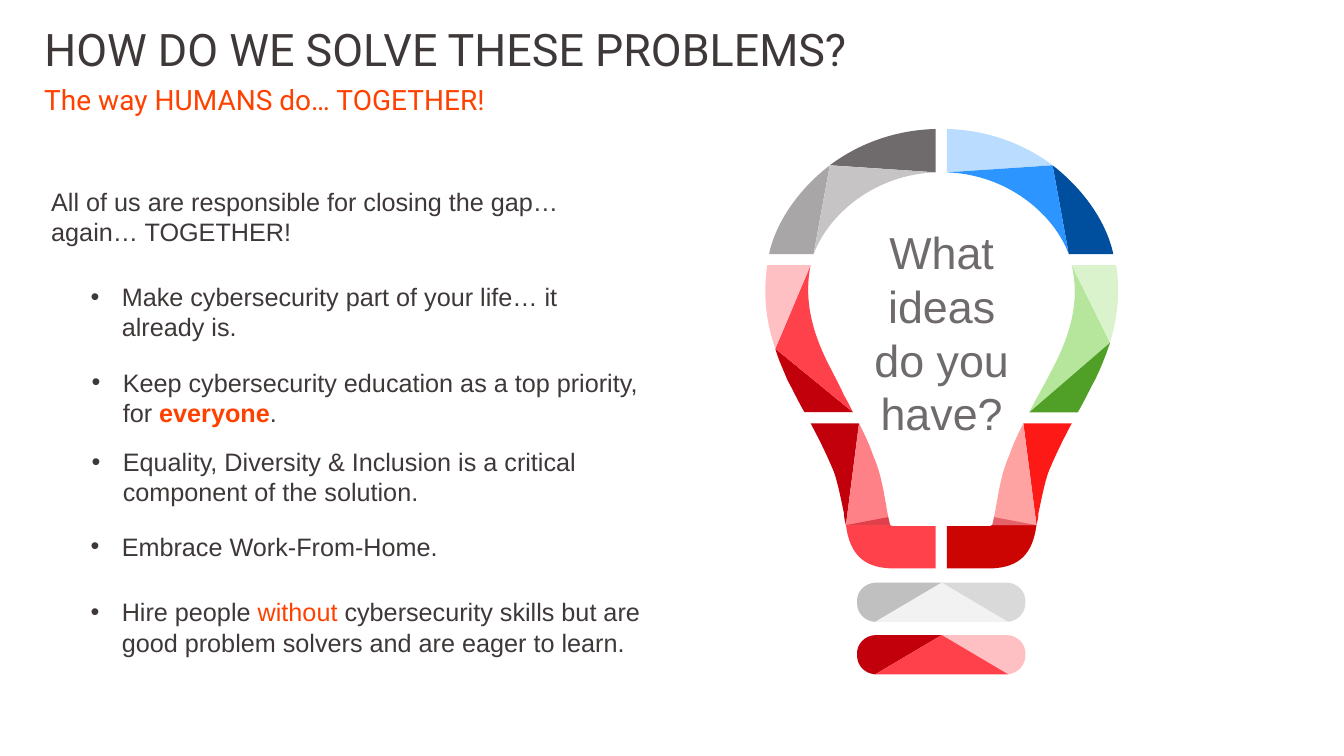
from lxml.etree import SubElement
from pptx import Presentation
from pptx.dml.color import RGBColor
from pptx.enum.text import MSO_ANCHOR as Anchor, MSO_AUTO_SIZE as AutoSize, PP_ALIGN as Align
from pptx.oxml.ns import qn
from pptx.util import Inches, Pt

INK = RGBColor(0x3E, 0x38, 0x38)
ORANGE = RGBColor(0xFF, 0x41, 0x00)
SLATE = RGBColor(0x6F, 0x6B, 0x6C)
GREY = RGBColor(0xA9, 0xA6, 0xA7)
SILVER = RGBColor(0xC6, 0xC4, 0xC4)
CAP_DARK = RGBColor(0xC0, 0xC0, 0xC0)
CAP_MID = RGBColor(0xD9, 0xD9, 0xD9)
CAP_LIGHT = RGBColor(0xF2, 0xF2, 0xF2)
NAVY = RGBColor(0x00, 0x4F, 0x9F)
BLUE = RGBColor(0x2C, 0x95, 0xFF)
SKY = RGBColor(0xB9, 0xDC, 0xFF)
GREEN = RGBColor(0x50, 0xA0, 0x28)
LIME = RGBColor(0xB5, 0xE6, 0x9C)
MINT = RGBColor(0xDA, 0xF3, 0xCD)
CRIMSON = RGBColor(0xC2, 0x00, 0x0B)
RED = RGBColor(0xFF, 0x41, 0x4C)
ROSE = RGBColor(0xFF, 0x81, 0x88)
PINK = RGBColor(0xFF, 0xC0, 0xC3)
SALMON = RGBColor(0xFE, 0xA3, 0xA2)
SCARLET = RGBColor(0xFD, 0x1A, 0x16)
BRICK = RGBColor(0xCC, 0x05, 0x02)
SHADE = RGBColor(0xCC, 0x23, 0x31)

HEADING = "HOW DO WE SOLVE THESE PROBLEMS?"
SUBHEADING = "The way HUMANS do… TOGETHER!"
INTRO = "All of us are responsible for closing the gap… again… TOGETHER!"
QUESTION = "What ideas do you have?"
HOT = {"color": ORANGE}
HOT_BOLD = {"color": ORANGE, "bold": True}
IDEAS = [
    ((0.8, 2.74, 5.52, 0.71), [("Make cybersecurity part of your life… it already is.", {})]),
    ((0.81, 3.59, 5.9, 0.71), [("Keep cybersecurity education as a top priority, for ", {}),
                               ("everyone", HOT_BOLD), (".", {})]),
    ((0.81, 4.38, 6.06, 0.71),
     [("Equality, Diversity & Inclusion is a critical component of the solution.", {})]),
    ((0.8, 5.22, 5.13, 0.4), [("Embrace Work-From-Home.", {})]),
    ((0.8, 5.87, 5.76, 0.71), [("Hire people ", {}), ("without", HOT),
                               (" cybersecurity skills but are good problem solvers"
                                " and are eager to learn.", {})]),
]

MIRRORED_FACETS = [
    (GREY, NAVY, [(8.23, 1.64), (7.92, 1.88, 7.7, 2.2, 7.63, 2.51), (7.63, 2.52),
                  (8.07, 2.52)]),
    (SLATE, SKY, [(9.28, 1.28), (8.9, 1.29, 8.54, 1.41, 8.23, 1.64), (9.28, 1.71)]),
    (SILVER, BLUE, [(9.28, 1.71), (8.23, 1.64), (8.07, 2.52),
                    (8.22, 2.12, 8.68, 1.73, 9.28, 1.71)]),
    (CRIMSON, SCARLET, [(8.52, 4.2), (8.04, 4.2), (8.12, 4.35, 8.2, 4.51, 8.27, 4.68),
                        (8.31, 4.79, 8.34, 4.95, 8.37, 5.09),
                        (8.37, 5.13, 8.38, 5.17, 8.39, 5.21)]),
    (RED, BRICK, [(8.4, 5.27), (8.45, 5.53, 8.6, 5.64, 8.87, 5.64),
                  (8.91, 5.64, 8.94, 5.64, 8.98, 5.64), (9.28, 5.64), (9.28, 5.22),
                  (8.98, 5.22), (8.94, 5.22, 8.91, 5.22, 8.87, 5.22),
                  (8.86, 5.22, 8.84, 5.22, 8.83, 5.21), (8.39, 5.21),
                  (8.39, 5.23, 8.4, 5.25, 8.4, 5.27)]),
    (ROSE, SALMON, [(8.39, 5.21), (8.83, 5.21), (8.83, 5.21, 8.82, 5.2, 8.82, 5.18),
                    (8.81, 5.13, 8.8, 5.08, 8.79, 5.02),
                    (8.76, 4.85, 8.73, 4.67, 8.66, 4.52),
                    (8.62, 4.4, 8.57, 4.3, 8.52, 4.2)]),
]
NECK_SHADE = [(8.39, 5.21), (8.83, 5.21), (8.81, 5.13)]
SIDE_FACETS = [
    (CRIMSON, [(7.69, 3.46), (7.72, 3.57, 7.77, 3.67, 7.81, 3.77),
               (7.87, 3.88, 7.92, 3.99, 7.98, 4.09), (8.46, 4.09)]),
    (RED, [(8.37, 3.92), (8.32, 3.81, 8.26, 3.7, 8.2, 3.58),
           (8.03, 3.23, 7.98, 2.93, 8.04, 2.63), (7.69, 3.46), (8.46, 4.09),
           (8.43, 4.03, 8.4, 3.97, 8.37, 3.92)]),
    (PINK, [(7.61, 2.63), (7.57, 2.9, 7.59, 3.17, 7.69, 3.46), (8.04, 2.63)]),
    (LIME, [(10.63, 2.63), (10.7, 2.93, 10.65, 3.23, 10.48, 3.58),
            (10.42, 3.7, 10.36, 3.81, 10.3, 3.92),
            (10.27, 3.97, 10.24, 4.03, 10.21, 4.09), (11.01, 3.4)]),
    (GREEN, [(10.69, 4.09), (10.75, 3.99, 10.8, 3.88, 10.86, 3.77),
             (10.92, 3.65, 10.97, 3.52, 11.01, 3.4), (10.21, 4.09)]),
    (MINT, [(11.07, 2.63), (10.63, 2.63), (11.01, 3.4),
            (11.09, 3.13, 11.11, 2.88, 11.07, 2.63)]),
]
CAP_END = [(8.69, 0), (8.58, 0, 8.49, 0.09, 8.5, 0.2),
           (8.5, 0.3, 8.57, 0.38, 8.68, 0.39), (9.34, 0)]
CAP_MIDDLE = [(8.68, 0.39), (10, 0.39), (9.34, 0)]
CAPS = [(5.78, CAP_DARK, CAP_MID, CAP_LIGHT), (6.3, CRIMSON, PINK, RED)]
MIRROR_SPAN = 18.67


def moved(outline, mirror=False, down=0):
    return [tuple((MIRROR_SPAN - v if mirror else v) if i % 2 == 0 else v + down
                  for i, v in enumerate(step)) for step in outline]


def add_facet(shapes, color, outline, alpha=None):
    start, *rest = [(Inches(step[i]), Inches(step[i + 1]))
                    for step in outline for i in range(0, len(step), 2)]
    builder = shapes.build_freeform(*start)
    builder.add_line_segments(rest, close=False)
    facet = builder.convert_to_shape()
    track = next(facet._element.iter(qn("a:path")))
    segments = iter(track.findall(qn("a:lnTo")))
    for step in outline[1:]:
        segment = next(segments)
        if len(step) == 6:
            segment.tag = qn("a:cubicBezTo")
            for extra in (next(segments), next(segments)):
                segment.append(extra[0])
                track.remove(extra)
    SubElement(track, qn("a:close"))
    facet.shadow.inherit = False
    facet.fill.solid()
    facet.fill.fore_color.rgb = color
    facet.line.fill.background()
    if alpha:
        tint = next(facet._element.spPr.iter(qn("a:srgbClr")))
        SubElement(tint, qn("a:alpha"), val=str(alpha * 1000))


def write(box, runs, look, layout={}, bullet=False):
    frame = box.text_frame
    for key, value in {"word_wrap": True, "auto_size": AutoSize.NONE,
                       "vertical_anchor": Anchor.TOP, **layout}.items():
        setattr(frame, key, value)
    paragraph = frame.paragraphs[0]
    if bullet:
        props = paragraph._p.get_or_add_pPr()
        props.set("marL", str(Inches(0.31)))
        props.set("indent", str(-Inches(0.31)))
        SubElement(props, qn("a:buFont"), typeface="Arial")
        SubElement(props, qn("a:buChar"), char="•")
    for text, change in runs:
        run = paragraph.add_run()
        run.text = text
        style = {**look, **change}
        run.font.color.rgb = style.pop("color")
        for key, value in style.items():
            setattr(run.font, key, value)
    return paragraph


def add_text(shapes, at, *details, **options):
    return write(shapes.add_textbox(*map(Inches, at)), *details, **options)


BODY = {"name": "Arial", "size": Pt(18), "color": INK}
GROW = {"auto_size": AutoSize.SHAPE_TO_FIT_TEXT}

deck = Presentation()
deck.slide_width, deck.slide_height = Inches(13.33), Inches(7.5)
slide = deck.slides.add_slide(deck.slide_layouts[5])

title = slide.shapes.title
for side, length in zip(("left", "top", "width", "height"), (0.34, 0.23, 10.9, 0.51)):
    setattr(title, side, Inches(length))
heading = write(title, [(HEADING, {})], {"name": "Roboto", "size": Pt(32), "color": INK})
subheading = add_text(slide.shapes, (0.34, 0.81, 8.72, 0.33), [(SUBHEADING, {})],
                      {"name": "Roboto", "size": Pt(20), "color": ORANGE})
for line in (heading, subheading):
    line.alignment = Align.LEFT
    line.line_spacing = 0.9

add_text(slide.shapes, (0.41, 1.8, 5.9, 0.71), [(INTRO, {})], BODY, GROW)
for place, idea in IDEAS:
    add_text(slide.shapes, place, idea, BODY, GROW, bullet=True)

bulb = slide.shapes.add_group_shape().shapes
for left_color, right_color, outline in MIRRORED_FACETS:
    add_facet(bulb, left_color, outline)
    add_facet(bulb, right_color, moved(outline, mirror=True))
for color, outline in SIDE_FACETS:
    add_facet(bulb, color, outline)
for top, left_color, right_color, middle_color in CAPS:
    add_facet(bulb, left_color, moved(CAP_END, down=top))
    add_facet(bulb, right_color, moved(CAP_END, mirror=True, down=top))
    add_facet(bulb, middle_color, moved(CAP_MIDDLE, down=top))
add_facet(bulb, CRIMSON, NECK_SHADE, alpha=50)
add_facet(bulb, SHADE, moved(NECK_SHADE, mirror=True), alpha=50)
question = add_text(bulb, (8.52, 2.18, 1.64, 2.26), [(QUESTION, {})],
                    {"name": "Arial", "size": Pt(32), "color": SLATE}, GROW)
question.alignment = Align.CENTER

deck.save("out.pptx")
